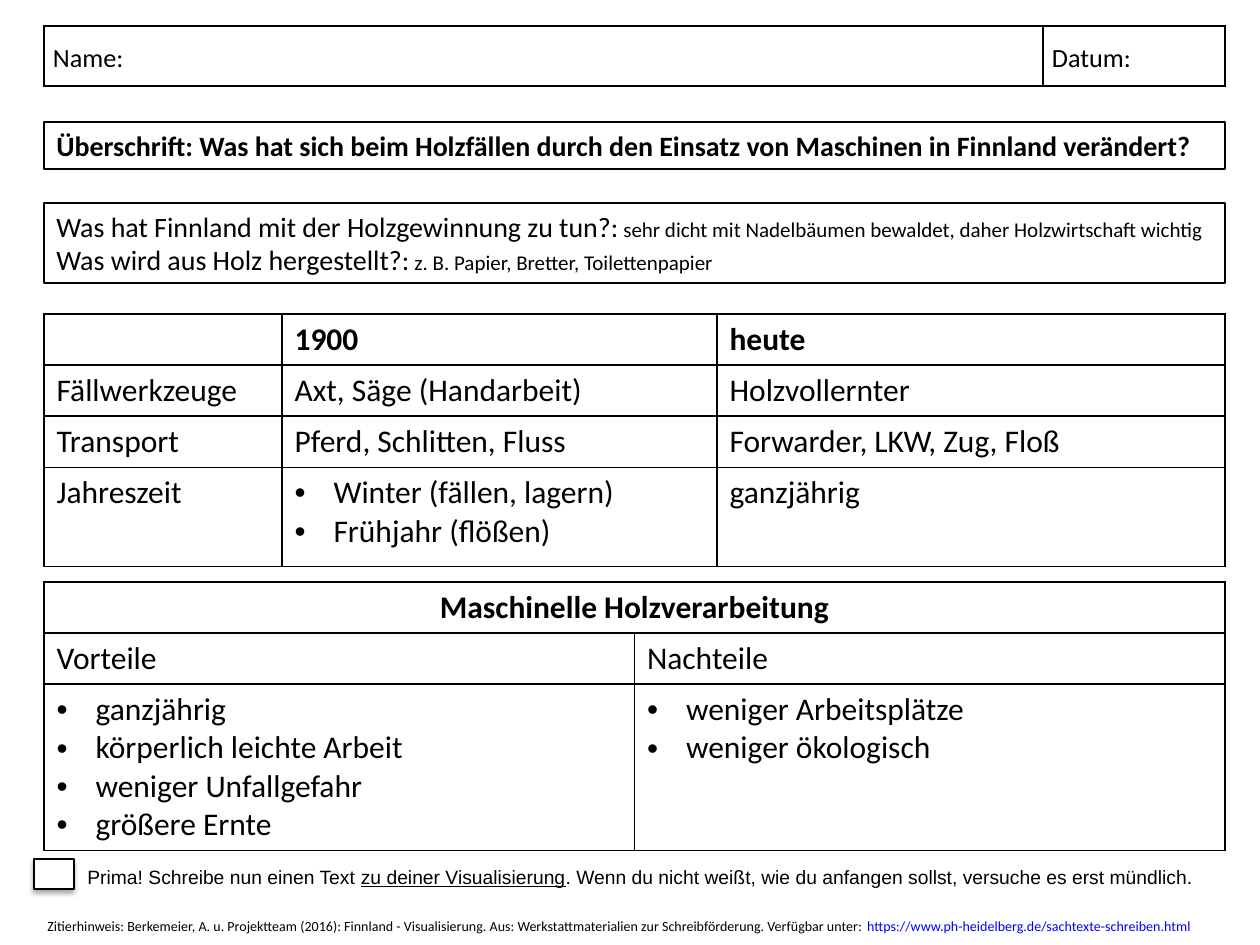
import pptx
import pptx.dml.color
import pptx.enum.shapes
import pptx.enum.text
import pptx.oxml
import pptx.oxml.ns
import pptx.util

SCALE = 914400 / 126
ALIGN = pptx.enum.text.PP_ALIGN
ANCHOR = pptx.enum.text.MSO_ANCHOR
SPACE = pptx.oxml.ns.nsdecls("a")
BLACK = "000000"
WHITE = "FFFFFF"


def px(size):
    return pptx.util.Emu(round(size * SCALE))


def hue(code):
    return pptx.dml.color.RGBColor.from_string(code)


def node(xml):
    head, rest = xml.split(">", 1)
    return pptx.oxml.parse_xml(f"{head} {SPACE}>{rest}")


def write(frame, lines, font="Calibri", size=18, bold=False, align=ALIGN.LEFT,
          space=None, hang=0, mark=None):
    frame.word_wrap = True
    for i, line in enumerate(lines):
        para = frame.paragraphs[0] if i == 0 else frame.add_paragraph()
        para.alignment = align
        para.line_spacing = space
        if hang:
            props = para._p.get_or_add_pPr()
            props.set("marL", str(px(hang)))
            props.set("indent", str(-px(hang)))
            if mark:
                props.append(node('<a:buFont typeface="Arial"></a:buFont>'))
                props.append(node(f'<a:buChar char="{mark}"></a:buChar>'))
        for part in [line] if isinstance(line, str) else line:
            text, look = (part, {}) if isinstance(part, str) else part
            run = para.add_run()
            run.text = text
            run.font.name = font
            run.font.size = pptx.util.Pt(look.get("size", size))
            run.font.bold = bold
            run.font.underline = look.get("under", False)
            run.font.color.rgb = hue(look.get("color", BLACK))


def panel(slide, box, lines=(), fill=None, line=BLACK, **style):
    shape = slide.shapes.add_shape(
        pptx.enum.shapes.MSO_SHAPE.RECTANGLE, *map(px, box))
    shape.shadow.inherit = False
    if fill:
        shape.fill.solid()
        shape.fill.fore_color.rgb = hue(fill)
    else:
        shape.fill.background()
    if line:
        shape.line.color.rgb = hue(line)
        shape.line.width = pptx.util.Pt(0.75)
    else:
        shape.line.fill.background()
    shape.text_frame.vertical_anchor = ANCHOR.TOP
    write(shape.text_frame, lines, **style)
    return shape


def frame_cell(cell):
    props = cell._tc.get_or_add_tcPr()
    for side in "LRTB":
        props.append(node(
            f'<a:ln{side} w="12700"><a:solidFill><a:srgbClr val="{BLACK}"/>'
            f'</a:solidFill></a:ln{side}>'))
    cell.fill.background()


def grid(slide, box, cols, rows):
    table = slide.shapes.add_table(len(rows), len(cols), *map(px, box)).table
    table.first_row = False
    table.horz_banding = False
    for col, width in zip(table.columns, cols):
        col.width = px(width)
    for row, height in zip(table.rows, rows):
        row.height = px(height)
    for cell in table.iter_cells():
        frame_cell(cell)
    return table


def fill_row(table, row, texts, **style):
    for col, text in enumerate(texts):
        frame = table.cell(row, col).text_frame
        if isinstance(text, list):
            write(frame, text, hang=39, mark="•", **style)
        elif text:
            write(frame, [text], **style)


def name_bar(slide, box):
    table = grid(slide, box, [999, 67, box[2] - 1066], [box[3]])
    table.cell(0, 1).merge(table.cell(0, 2))
    for col in range(2):
        cell = table.cell(0, col)
        cell.vertical_anchor = ANCHOR.MIDDLE
        cell.margin_left = cell.margin_right = px(9)
        cell.margin_top = cell.margin_bottom = 0
    fill_row(table, 0, ["Name:", "Datum:"], size=15, space=1.15)


def then_now(slide, box):
    table = grid(slide, box, [238, 435, box[2] - 673], [50, 50, 50, box[3] - 150])
    fill_row(table, 0, ["", "1900", "heute"], bold=True)
    rows = [
        ["Fällwerkzeuge", "Axt, Säge (Handarbeit)", "Holzvollernter"],
        ["Transport", "Pferd, Schlitten, Fluss", "Forwarder, LKW, Zug, Floß"],
        ["Jahreszeit", ["Winter (fällen, lagern)", "Frühjahr (flößen)"],
         "ganzjährig"],
    ]
    for i, texts in enumerate(rows, 1):
        fill_row(table, i, texts)


def pros_cons(slide, box):
    table = grid(slide, box, [box[2] / 2] * 2, [50, 50, box[3] - 100])
    table.cell(0, 0).merge(table.cell(0, 1))
    fill_row(table, 0, ["Maschinelle Holzverarbeitung"], bold=True,
             align=ALIGN.CENTER)
    fill_row(table, 1, ["Vorteile", "Nachteile"])
    fill_row(table, 2, [
        ["ganzjährig", "körperlich leichte Arbeit", "weniger Unfallgefahr",
         "größere Ernte"],
        ["weniger Arbeitsplätze", "weniger ökologisch"],
    ])


def task(slide, box):
    left, top, width, height = box
    panel(slide, box, [[
        "\tPrima! Schreibe nun einen Text ",
        ("zu deiner Visualisierung", {"under": True}),
        ". Wenn du nicht weißt, wie du anfangen sollst, "
        "versuche es erst mündlich.",
    ]], fill=WHITE, line=None, font="Arial", size=11, hang=50)
    tick = panel(slide, (left + 9, top, 40, 30), fill=WHITE)
    tick._element.spPr.find(pptx.oxml.ns.qn("a:effectLst")).append(node(
        '<a:outerShdw blurRad="39370" dist="22860" dir="5400000" rotWithShape="0">'
        f'<a:srgbClr val="{BLACK}"><a:alpha val="35000"/></a:srgbClr>'
        '</a:outerShdw>'))


def source(slide, box):
    note = slide.shapes.add_textbox(*map(px, box))
    write(note.text_frame, [[
        "Zitierhinweis: Berkemeier, A. u. Projektteam (2016): Finnland - "
        "Visualisierung. Aus: Werkstattmaterialien zur Schreibförderung. "
        "Verfügbar unter: ",
        ("https://www.ph-heidelberg.de/sachtexte-schreiben.html",
         {"color": "0000FF"}),
    ]], size=8)


def main():
    deck = pptx.Presentation()
    deck.slide_width, deck.slide_height = px(1260), px(945)
    slide = deck.slides.add_slide(deck.slide_layouts[6])
    left, width = 44, 1181
    small = {"size": 12}
    panel(slide, (left, 122, width, 47), [
        "Überschrift: Was hat sich beim Holzfällen durch den Einsatz "
        "von Maschinen in Finnland verändert?"], size=16, bold=True)
    name_bar(slide, (left, 26, width, 60))
    panel(slide, (left, 203, width, 80), [
        ["Was hat Finnland mit der Holzgewinnung zu tun?:", (" ", {"size": 11}),
         ("sehr dicht mit Nadelbäumen bewaldet, daher Holzwirtschaft wichtig",
          small)],
        ["Was wird aus Holz hergestellt?:",
         (" z. B. Papier, Bretter, Toilettenpapier", small)],
    ], size=16)
    task(slide, (25, 859, 1221, 36))
    then_now(slide, (left, 314, width, 249))
    pros_cons(slide, (left, 582, width, 264))
    source(slide, (35, 911, width, 30))
    deck.save("out.pptx")


if __name__ == "__main__":
    main()
